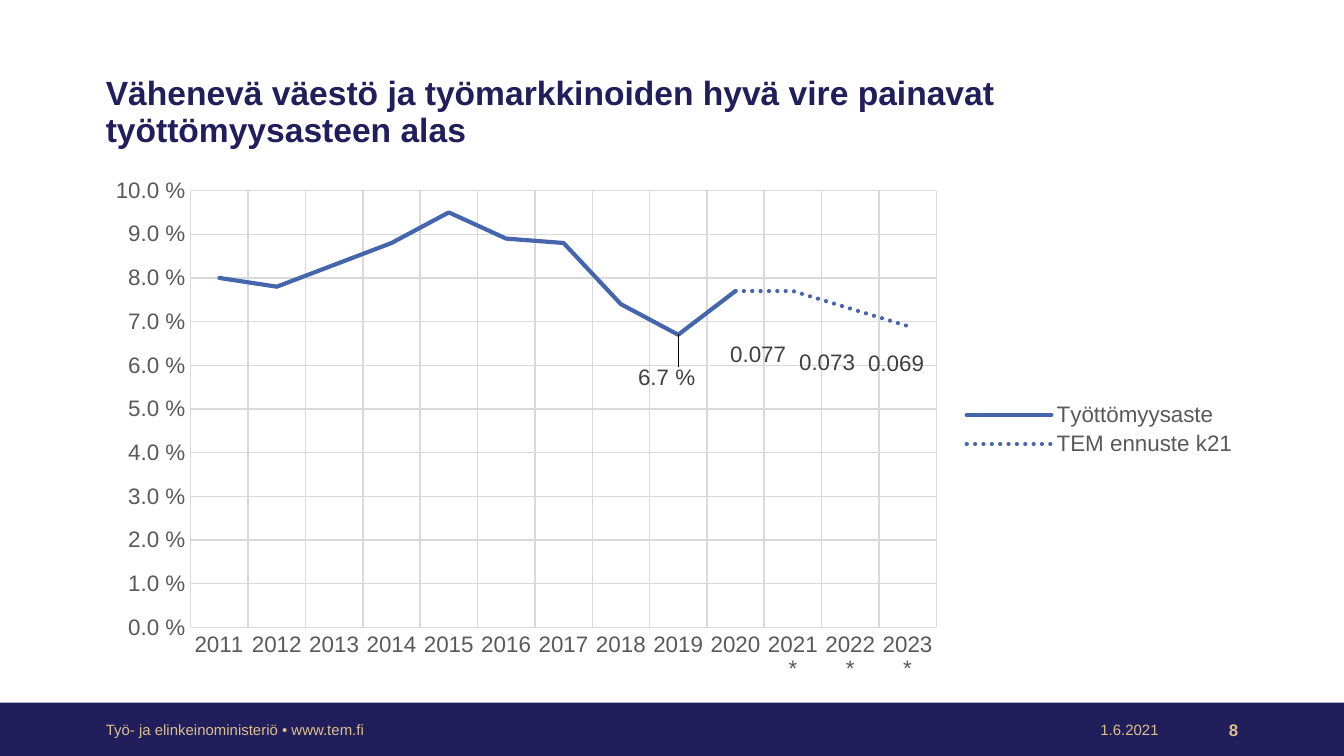
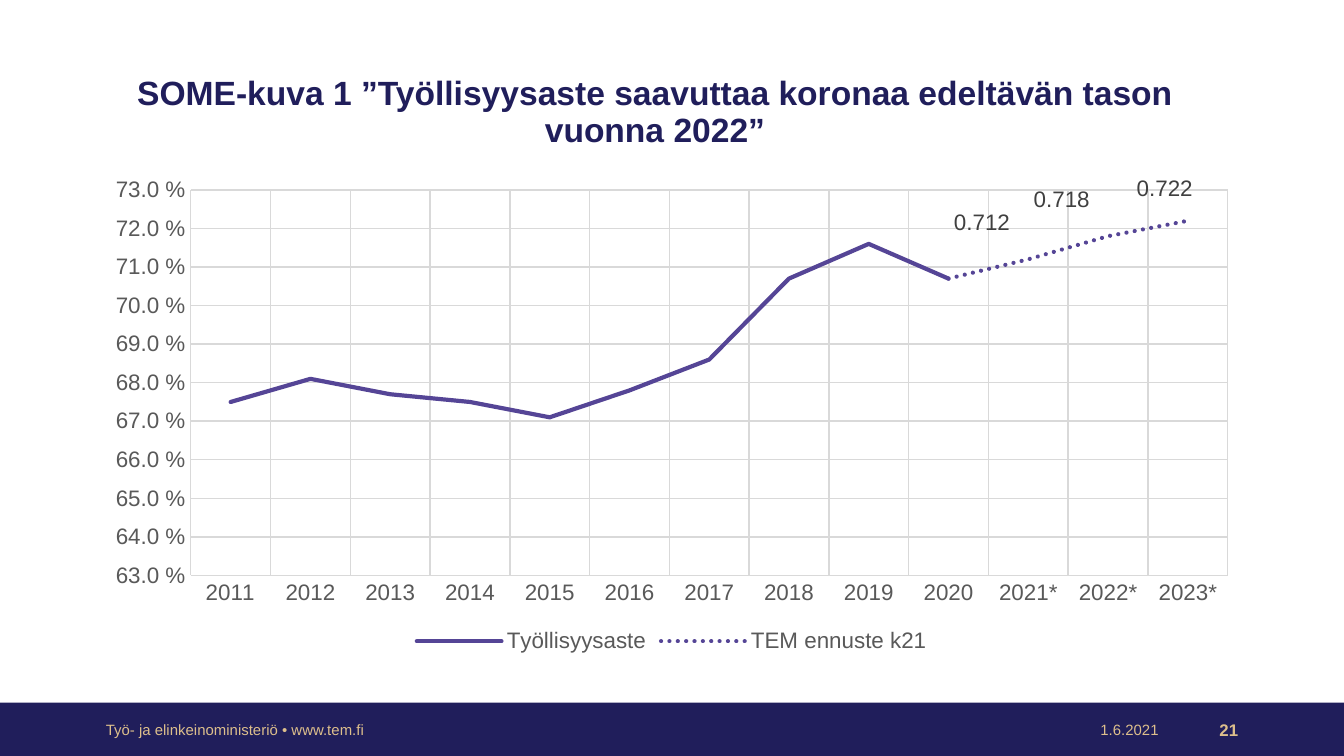
from lxml.etree import SubElement
from pptx import Presentation
from pptx.chart.data import CategoryChartData as Data
from pptx.dml.color import RGBColor
from pptx.enum.chart import XL_CHART_TYPE as Kind, XL_LABEL_POSITION as Spot
from pptx.enum.chart import XL_LEGEND_POSITION as Side, XL_TICK_MARK as Tick
from pptx.enum.dml import MSO_LINE_DASH_STYLE as Dash
from pptx.enum.shapes import MSO_SHAPE as Form
from pptx.enum.text import MSO_ANCHOR as Anchor, PP_ALIGN as Align
from pptx.oxml.ns import qn
from pptx.util import Cm, Pt

FONT = "Arial"
NAVY, GOLD, GREY, DARK, GRID = "201E5B", "DDBF8C", "595959", "404040", "D9D9D9"
LEFT = 1.75
YEARS = [str(year) for year in range(2011, 2021)] + ["2021*", "2022*", "2023*"]
PAST = 10
PERCENT = "0.0\\ %"
C15 = "http://schemas.microsoft.com/office/drawing/2012/chart"
LEADS = "{CE6537A1-D6FC-4f65-9D91-7224C49458BB}"


def hue(code):
    return RGBColor.from_string(code)


def style(font, size, color, bold=False):
    font.name = FONT
    font.size = Pt(size)
    font.bold = bold
    font.color.rgb = hue(color)


def stroke(line, color, width):
    line.color.rgb = hue(color)
    line.width = Pt(width)


def text(slide, words, box, size, color, align=Align.LEFT, bold=False, space=1.0):
    frame = slide.shapes.add_textbox(*map(Cm, box)).text_frame
    frame.word_wrap = True
    frame.vertical_anchor = Anchor.MIDDLE
    frame.margin_top = frame.margin_bottom = 0
    para = frame.paragraphs[0]
    para.alignment = align
    para.line_spacing = space
    run = para.add_run()
    run.text = words
    style(run.font, size, color, bold)


def base(deck, title, wide, align, page):
    slide = deck.slides.add_slide(deck.slide_layouts[6])
    band = slide.shapes.add_shape(Form.RECTANGLE, 0, Cm(13.28), deck.slide_width, Cm(1.01))
    band.shadow.inherit = False
    band.fill.solid()
    band.fill.fore_color.rgb = hue(NAVY)
    band.line.fill.background()
    text(slide, title, (LEFT, 1.1, wide, 2.08), 18, NAVY, align, True, 0.9)
    top, high = 13.58, 0.43
    text(slide, "Työ- ja elinkeinoministeriö • www.tem.fi", (LEFT, top, 8.56, high), 8, GOLD)
    text(slide, "1.6.2021", (20.19, top, 1.96, high), 8, GOLD, Align.RIGHT)
    text(slide, page, (22.15, top, 1.5, high), 9, GOLD, Align.RIGHT, True)
    return slide


def axes(chart, low, high):
    cat, val = chart.category_axis, chart.value_axis
    for axis in (cat, val):
        axis.major_tick_mark = axis.minor_tick_mark = Tick.NONE
        axis.has_major_gridlines = True
        stroke(axis.major_gridlines.format.line, GRID, 0.75)
        style(axis.tick_labels.font, 12, GREY)
    cat._element.xpath("c:txPr/a:bodyPr")[0].set("rot", "-60000000")
    stroke(cat.format.line, GRID, 0.75)
    val.format.line.fill.background()
    val.minimum_scale, val.maximum_scale, val.major_unit = low, high, 0.01
    val.tick_labels.number_format = PERCENT
    val.tick_labels.number_format_is_linked = False


def find(series, index):
    return series._element.xpath(f"c:dLbls/c:dLbl[c:idx/@val='{index}']")[0]


def label(series, index, spot, right, down):
    tag = series.points[index].data_label
    style(tag.font, 12, DARK)
    tag.position = spot
    node = find(series, index)
    place = SubElement(node, qn("c:layout"))
    node.find(qn("c:idx")).addnext(place)
    manual = SubElement(place, qn("c:manualLayout"))
    for key, move in (("x", right), ("y", down)):
        SubElement(manual, qn(f"c:{key}")).set("val", str(move))


def drop(series, index, spot):
    series.points[index].data_label.position = spot
    node = find(series, index)
    for part in list(node)[1:]:
        node.remove(part)
    SubElement(node, qn("c:delete")).set("val", "1")


def leads(series, shown):
    labels = series.data_labels._element
    flag = "1" if shown else "0"
    for node in labels.xpath("c:showLeaderLines"):
        node.set("val", flag)
    ext = SubElement(SubElement(labels, qn("c:extLst")), qn("c:ext"))
    ext.set("uri", LEADS)
    SubElement(ext, f"{{{C15}}}showLeaderLines", nsmap={"c15": C15}).set("val", flag)


def graph(slide, name, known, ahead, color, high, scale, side, spot, moves):
    data = Data()
    data.categories = YEARS
    data.add_series(name, known + [None] * len(ahead), PERCENT)
    data.add_series("TEM ennuste k21", [None] * (PAST - 1) + known[-1:] + ahead)
    box = map(Cm, (LEFT, 3.18, 21.89, high))
    chart = slide.shapes.add_chart(Kind.LINE, *box, data).chart
    chart.has_title = False
    style(chart.font, 12, "000000")
    chart.has_legend = True
    chart.legend.position = side
    chart.legend.include_in_layout = False
    style(chart.legend.font, 12, GREY)
    axes(chart, *scale)
    chart.plots[0].vary_by_categories = False
    past, future = chart.plots[0].series
    for series in (past, future):
        series.smooth = False
        stroke(series.format.line, color, 2.25)
        series._element.xpath("c:spPr/a:ln")[0].set("cap", "rnd")
    future.format.line.dash_style = Dash.ROUND_DOT
    tags = future.data_labels
    tags.show_value = True
    tags.position = spot
    style(tags.font, 12, DARK)
    drop(future, PAST - 1, spot)
    for index, move in enumerate(moves, PAST):
        label(future, index, spot, *move)
    leads(future, False)
    return past


def jobless(deck):
    title = "Vähenevä väestö ja työmarkkinoiden hyvä vire painavat työttömyysasteen alas"
    slide = base(deck, title, 20.02, Align.LEFT, "8")
    known = [0.080, 0.078, 0.083, 0.088, 0.095, 0.089, 0.088, 0.074, 0.067, 0.077]
    past = graph(slide, "Työttömyysaste", known, [0.077, 0.073, 0.069], "4565AD",
                 9.88, (0, 0.1), Side.RIGHT, Spot.BELOW,
                 [(-0.03, 0.09), (-0.02, 0.07), (-0.01, 0.04)])
    past.data_labels.show_value = False
    label(past, 8, Spot.BELOW, -0.01, 0.05)
    leads(past, True)


def jobs(deck):
    title = "SOME-kuva 1 ”Työllisyysaste saavuttaa koronaa edeltävän tason vuonna 2022”"
    slide = base(deck, title, 21.26, Align.CENTER, "21")
    known = [0.675, 0.681, 0.677, 0.675, 0.671, 0.678, 0.686, 0.707, 0.716, 0.707]
    graph(slide, "Työllisyysaste", known, [0.712, 0.718, 0.722], "554596",
          9.27, (0.63, 0.73), Side.BOTTOM, Spot.ABOVE,
          [(-0.04, -0.04), (-0.04, -0.04), (-0.02, -0.03)])


def main():
    deck = Presentation()
    deck.slide_width, deck.slide_height = Cm(25.4), Cm(14.29)
    jobless(deck)
    jobs(deck)
    deck.save("out.pptx")


if __name__ == "__main__":
    main()
